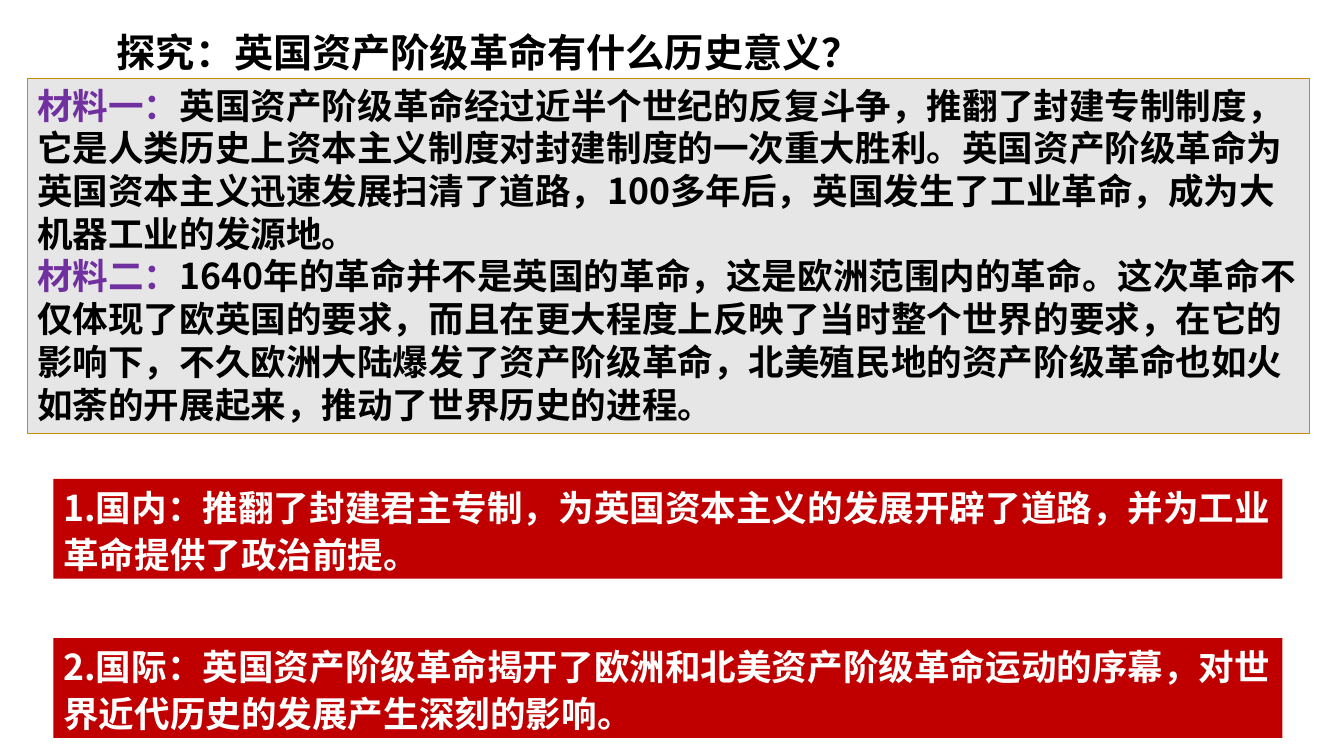
from lxml import etree
from pptx import Presentation
from pptx.dml.color import RGBColor
from pptx.enum.shapes import MSO_SHAPE
from pptx.enum.text import MSO_ANCHOR, PP_ALIGN
from pptx.oxml.ns import qn
from pptx.util import Inches, Pt

RECT = MSO_SHAPE.RECTANGLE
TOP, MIDDLE = MSO_ANCHOR.TOP, MSO_ANCHOR.MIDDLE
LEFT = PP_ALIGN.LEFT
FONT = "Noto Sans CJK SC"
BODY_SIZE = 25.4
COLORS = {"black": "000000", "white": "FFFFFF", "purple": "7030A0",
          "gray": "E7E6E6", "gold": "BF9000", "red": "C00000"}

TITLE = "探究：英国资产阶级革命有什么历史意义？"
MATERIALS = [
    ("材料一：", "英国资产阶级革命经过近半个世纪的反复斗争，推翻了封建专制制度，"
     "它是人类历史上资本主义制度对封建制度的一次重大胜利。英国资产阶级革命为"
     "英国资本主义迅速发展扫清了道路，100多年后，英国发生了工业革命，成为大"
     "机器工业的发源地。"),
    ("材料二：", "1640年的革命并不是英国的革命，这是欧洲范围内的革命。这次革命"
     "不仅体现了欧英国的要求，而且在更大程度上反映了当时整个世界的要求，在它"
     "的影响下，不久欧洲大陆爆发了资产阶级革命，北美殖民地的资产阶级革命也如"
     "火如荼的开展起来，推动了世界历史的进程。"),
]
ANSWERS = [
    "1.国内：推翻了封建君主专制，为英国资本主义的发展开辟了道路，并为工业革命提供了政治前提。",
    "2.国际：英国资产阶级革命揭开了欧洲和北美资产阶级革命运动的序幕，对世界近代历史的发展产生深刻的影响。",
]


def rgb(name):
    return RGBColor.from_string(COLORS[name])


def add_run(p, text, size, color):
    r = p.add_run()
    r.text = text
    r.font.size, r.font.bold, r.font.name = Pt(size), True, FONT
    r.font.color.rgb = rgb(color)
    etree.SubElement(r.font._element, qn("a:ea"), typeface=FONT)


def fill_text(s, paragraphs, size, pitch, anchor):
    """Write paragraphs, each a list of (text, color), with a fixed line pitch."""
    tf = s.text_frame
    tf.word_wrap, tf.vertical_anchor = True, anchor
    for i, runs in enumerate(paragraphs):
        p = tf.add_paragraph() if i else tf.paragraphs[0]
        p.alignment, p.line_spacing = LEFT, Pt(pitch)
        for text, color in runs:
            add_run(p, text, size, color)


def add_panel(slide, box, fill, line=None):
    s = slide.shapes.add_shape(RECT, *map(Inches, box))
    s.shadow.inherit = False
    s.fill.solid()
    s.fill.fore_color.rgb = rgb(fill)
    if line:
        s.line.color.rgb = rgb(line)
        s.line.width = Pt(0.75)
    else:
        s.line.fill.background()
    return s


def add_title(slide, box):
    s = slide.shapes.add_textbox(*map(Inches, box))
    fill_text(s, [[(TITLE, "black")]], 28, 34, TOP)


def add_materials(slide, box):
    s = add_panel(slide, box, "gray", "gold")
    paragraphs = [[(label, "purple"), (text, "black")] for label, text in MATERIALS]
    fill_text(s, paragraphs, BODY_SIZE, 30.5, TOP)


def add_answers(slide, box, pitch):
    """Stack the answer bars downwards from the first bar's box."""
    left, top, width, height = box
    for i, text in enumerate(ANSWERS):
        s = add_panel(slide, (left, top + i * pitch, width, height), "red")
        tf = s.text_frame
        tf.margin_top = tf.margin_bottom = 0
        tf.margin_right = Inches(0.08)
        fill_text(s, [[(text, "white")]], BODY_SIZE, 33.5, MIDDLE)


def main():
    prs = Presentation()
    prs.slide_width, prs.slide_height = Inches(13.33), Inches(7.5)
    slide = prs.slides.add_slide(prs.slide_layouts[6])
    add_title(slide, (1.06, 0.23, 12.27, 0.57))
    add_materials(slide, (0.27, 0.78, 12.72, 3.52))
    add_answers(slide, (0.53, 4.75, 12.19, 0.99), 1.58)
    prs.save("out.pptx")


if __name__ == "__main__":
    main()
